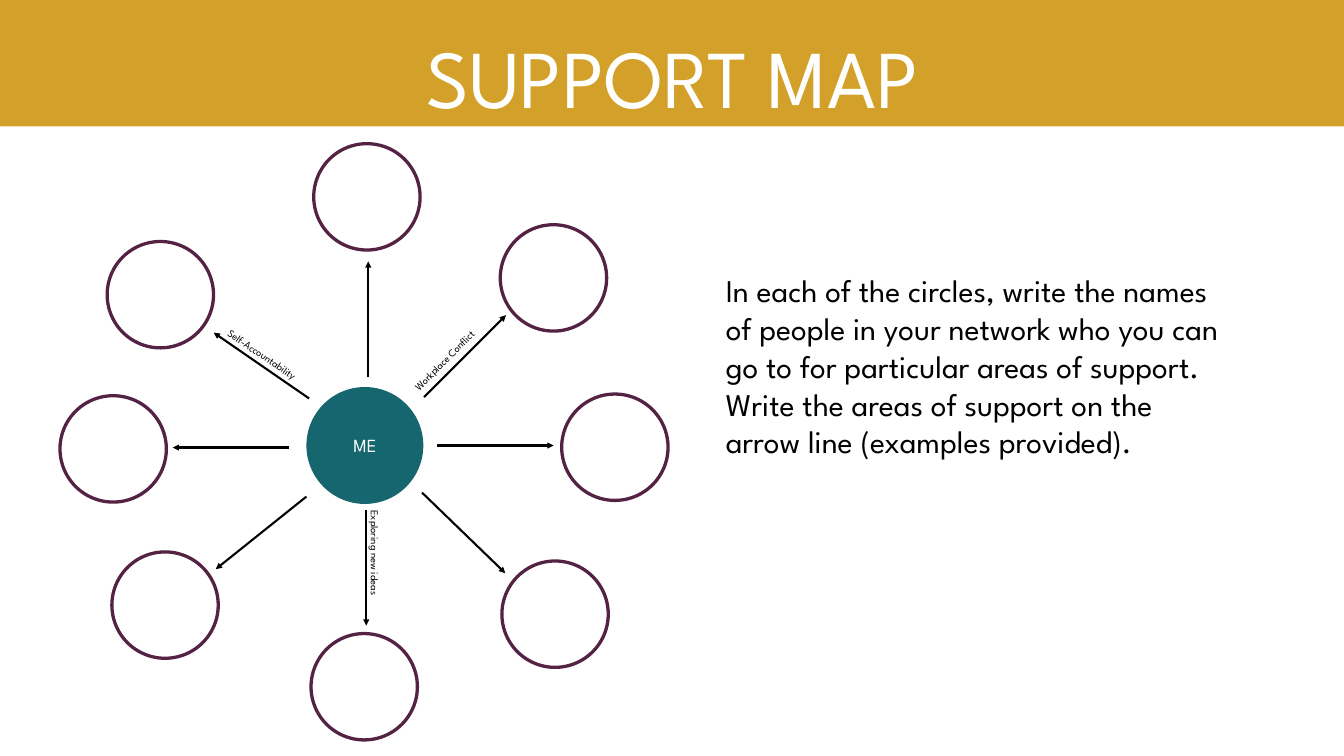
import pptx
import pptx.dml.color
import pptx.enum.shapes
import pptx.enum.text
import pptx.oxml.ns
import pptx.util
from lxml import etree

WIDTH, HEIGHT = pptx.util.Inches(20), pptx.util.Inches(11.25)
FONT = "League Spartan"
GOLD, TEAL, PLUM, BLACK, WHITE = "D3A12A", "166670", "542344", "000000", "FFFFFF"
OVAL = pptx.enum.shapes.MSO_SHAPE.OVAL
DONUT = pptx.enum.shapes.MSO_SHAPE.DONUT
LEFT = pptx.enum.text.PP_ALIGN.LEFT
CENTER = pptx.enum.text.PP_ALIGN.CENTER
HUB, HUB_SIZE, RING_SIZE = (27.15, 58.93), 8.7, 8.16
RING_BAND = 0.03

# Each spoke: ring centre, arrow start, arrow end.
SPOKES = [
    ((27.3, 26.04), (27.4, 49.87), (27.4, 34.58)),
    ((41.18, 36.76), (31.55, 52.53), (37.65, 41.69)),
    ((45.75, 59.16), (32.55, 58.93), (41.2, 58.93)),
    ((41.3, 81.24), (31.4, 65.16), (37.6, 75.82)),
    ((27.1, 90.84), (27.25, 67.47), (27.25, 82.76)),
    ((12.28, 80.04), (22.8, 65.69), (16.05, 75.29)),
    ((8.42, 59.38), (21.5, 59.2), (12.85, 59.2)),
    ((11.93, 38.98), (23, 52.71), (15.9, 44)),
]
LABELS = [
    ("Workplace Conflict", (34.63, 44.8), 315),
    ("Self-Accountability", (21.33, 49.07), 34.4),
    ("Exploring new ideas", (27.93, 76.71), 90),
]


def color(value):
    """Turn a hex string into a colour."""
    return pptx.dml.color.RGBColor.from_string(value)


def col(share):
    """Turn a percentage of the slide width into a length."""
    return round(WIDTH * share / 100)


def row(share):
    """Turn a percentage of the slide height into a length."""
    return round(HEIGHT * share / 100)


def assign(target, values):
    """Set the attributes of an object from a dict."""
    for name, value in values.items():
        setattr(target, name, value)


def place(sp, x, y, w, h):
    """Move and size a shape in percentages of the slide."""
    assign(sp, {"left": col(x), "top": row(y), "width": col(w), "height": row(h)})


def write(sp, text, size, leading, ink, align):
    """Fill a shape with one formatted paragraph."""
    tf = sp.text_frame
    assign(tf, {
        "word_wrap": True,
        "auto_size": pptx.enum.text.MSO_AUTO_SIZE.NONE,
        "vertical_anchor": pptx.enum.text.MSO_ANCHOR.TOP,
        "margin_left": 0, "margin_right": 0, "margin_top": 0, "margin_bottom": 0,
    })
    p = tf.paragraphs[0]
    assign(p, {"alignment": align, "line_spacing": pptx.util.Pt(leading),
               "space_before": pptx.util.Pt(0)})
    r = p.add_run()
    r.text = text
    assign(r.font, {"name": FONT, "size": pptx.util.Pt(size)})
    r.font.color.rgb = color(ink)
    return p


def add_solid(s, kind, x, y, w, h, fill):
    """Add a filled shape without line or shadow."""
    sp = s.shapes.add_shape(kind, x, y, w, h)
    sp.shadow.inherit = False
    sp.fill.solid()
    sp.fill.fore_color.rgb = color(fill)
    sp.line.fill.background()
    return sp


def add_circle(s, kind, center, size, fill):
    """Add a disc or ring around a centre."""
    d = col(size)
    return add_solid(s, kind, col(center[0]) - d // 2, row(center[1]) - d // 2, d, d, fill)


def add_arrow(s, start, end):
    """Add a straight arrow from start to end."""
    line = s.shapes.add_connector(pptx.enum.shapes.MSO_CONNECTOR.STRAIGHT,
                                  col(start[0]), row(start[1]), col(end[0]), row(end[1]))
    line.line.width = pptx.util.Pt(2.25)
    line.line.color.rgb = color(BLACK)
    qn = pptx.oxml.ns.qn
    etree.SubElement(line.line._get_or_add_ln(), qn("a:tailEnd"), type="triangle")
    etree.SubElement(line._element.spPr, qn("a:effectLst"))


def add_label(s, text, center, w, h, size, leading, ink, align, rotation=0):
    """Add a text box around a centre."""
    sp = s.shapes.add_textbox(0, 0, 0, 0)
    place(sp, center[0] - w / 2, center[1] - h / 2, w, h)
    sp.rotation = rotation
    write(sp, text, size, leading, ink, align)


def add_header(s):
    """Add the gold band with the title on it."""
    band = add_solid(s, pptx.enum.shapes.MSO_SHAPE.RECTANGLE,
                     col(-0.9), 0, col(101.8), row(16.71), GOLD)
    title = s.shapes.title
    title._element.addprevious(band._element)
    place(title, 4.35, 3.47, 91.35, 12.98)
    write(title, "SUPPORT MAP", 88, 105.6, WHITE, CENTER)


def add_instructions(s):
    """Put the instructions in the body placeholder without a bullet."""
    body = s.placeholders[1]
    place(body, 54, 35.82, 37.8, 35.02)
    p = write(body, "In each of the circles, write the names of people in your network "
              "who you can go to for particular areas of support. Write the areas of "
              "support on the arrow line (examples provided).", 33.8, 40.6, BLACK, LEFT)
    pPr = p._p.get_or_add_pPr()
    pPr.set("marL", "0")
    pPr.set("indent", "0")
    etree.SubElement(pPr, pptx.oxml.ns.qn("a:buNone"))


def add_map(s):
    """Add the hub, its arrows, the rings and the example labels."""
    add_circle(s, OVAL, HUB, HUB_SIZE, TEAL)
    for ring, start, end in SPOKES:
        add_arrow(s, start, end)
        add_circle(s, DONUT, ring, RING_SIZE, PLUM).adjustments[0] = RING_BAND
    add_label(s, "ME", HUB, 8.05, 2.93, 19.8, 23.7, WHITE, CENTER)
    for text, center, rotation in LABELS:
        add_label(s, text, center, 10.35, 1.6, 11.2, 13.5, BLACK, LEFT, rotation)


def main():
    """Build and save the slide."""
    prs = pptx.Presentation()
    assign(prs, {"slide_width": WIDTH, "slide_height": HEIGHT})
    s = prs.slides.add_slide(prs.slide_layouts[1])
    add_header(s)
    add_map(s)
    add_instructions(s)
    prs.save("out.pptx")


if __name__ == "__main__":
    main()
